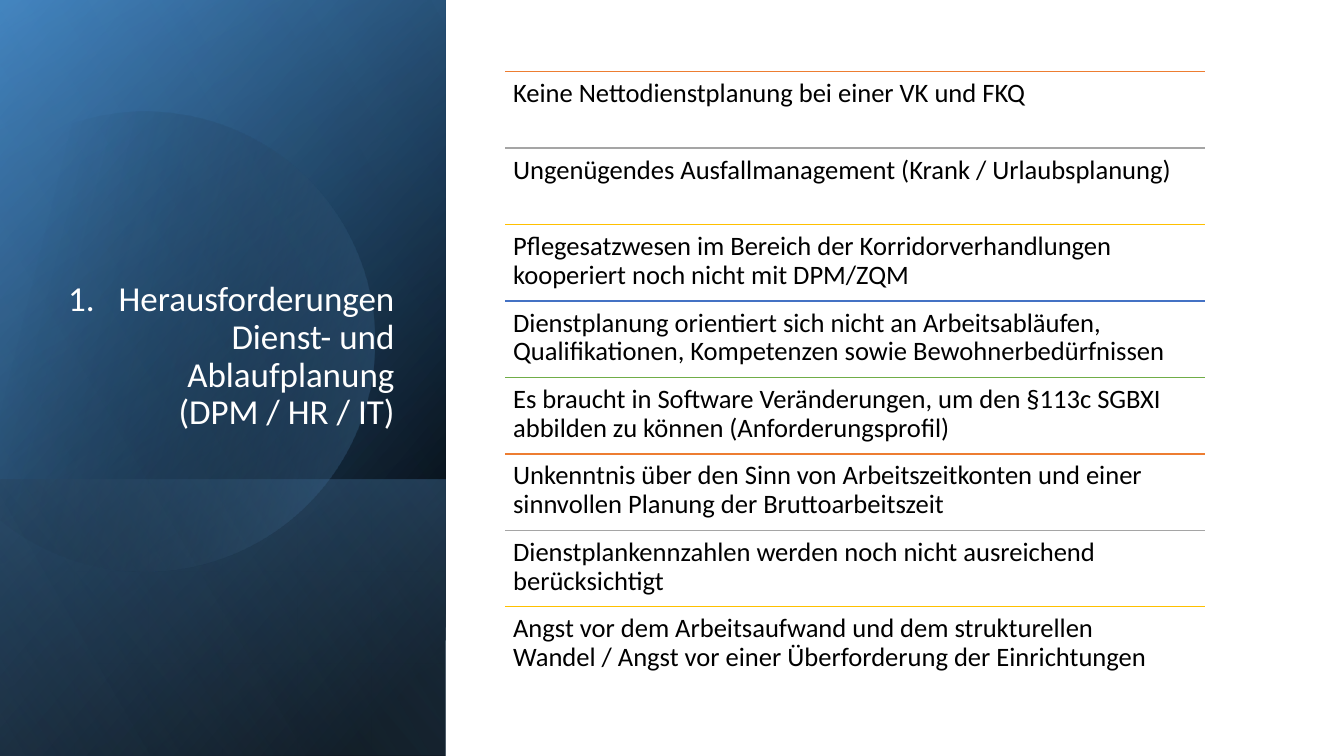
from math import acos, cos, degrees, radians, sin

from lxml.etree import SubElement
from pptx import Presentation
from pptx.dml.color import RGBColor
from pptx.enum.shapes import MSO_CONNECTOR as Connector, MSO_SHAPE as Shape
from pptx.enum.text import MSO_ANCHOR as Anchor, PP_ALIGN as Align
from pptx.oxml.ns import qn
from pptx.util import Inches, Pt


def fill_gradient(shape, stops, angle):
    """Fill with (position %, colour, opacity %) stops, without line or shadow."""
    shape.shadow.inherit = False
    shape.line.fill.background()
    shape.fill.gradient()
    gradient = shape.fill._xPr.find(qn("a:gradFill"))
    for child in list(gradient):
        gradient.remove(child)
    stop_list = SubElement(gradient, qn("a:gsLst"))
    for position, color, opacity in stops:
        stop = SubElement(stop_list, qn("a:gs"), pos=str(position * 1000))
        tone = SubElement(stop, qn("a:srgbClr"), val=color)
        SubElement(tone, qn("a:alpha"), val=str(opacity * 1000))
    SubElement(gradient, qn("a:lin"), ang=str(angle * 60000), scaled="0")


def write_text(box, text, size, color, margins, anchor, align):
    frame = box.text_frame
    side, edge = Inches(margins[0]), Inches(margins[1])
    layout = {"word_wrap": True, "vertical_anchor": anchor,
              "margin_left": side, "margin_right": side,
              "margin_top": edge, "margin_bottom": edge}
    for name, value in layout.items():
        setattr(frame, name, value)
    para = frame.paragraphs[0]
    para.alignment = align
    para.line_spacing = 0.9
    span = para.add_run()
    span.text = text
    span.font.name = "Calibri"
    span.font.size = Pt(size)
    span.font.color.rgb = RGBColor.from_string(color)
    return para


deck = Presentation()
deck.slide_width, deck.slide_height = Inches(13.33), Inches(7.5)
page = deck.slides.add_slide(deck.slide_layouts[6])

# Side panel: layered gradients, each rectangle turned by a quarter
PANEL_WIDTH, PANEL_HEIGHT = 4.42, 7.5
DISC = "disc"
layers = [
    (PANEL_HEIGHT, [(8, "000000", 100), (100, "2E75B6", 100)], 50),
    (PANEL_HEIGHT, [(0, "000000", 0), (99, "5B9BD5", 46)], 30),
    (2.74, [(2, "5B9BD5", 29), (100, "000000", 30)], 130),
    (DISC, [(29, "000000", 0), (100, "5B9BD5", 43)], 30),
    (PANEL_HEIGHT, [(0, "000000", 0), (99, "9DC3E6", 11)], 120),
]
for length, stops, angle in layers:
    if length == DISC:
        # Circle cut off by a chord, tilted so that the chord stands upright
        center_x, center_y, radius, chord, tilt = 1.43, 3.35, 2.28, 1.59, 16.1
        half_arc = degrees(acos(-chord / radius))
        steps = 120
        turns = [radians(tilt - half_arc + 2 * half_arc * step / steps)
                 for step in range(steps + 1)]
        points = [(Inches(center_x + radius * cos(turn)),
                   Inches(center_y + radius * sin(turn))) for turn in turns]
        builder = page.shapes.build_freeform(*points[0])
        builder.add_line_segments(points[1:], close=True)
        layer = builder.convert_to_shape()
        layer.rotation = 360 - tilt
    else:
        layer = page.shapes.add_shape(
            Shape.RECTANGLE,
            Inches((PANEL_WIDTH - length) / 2),
            Inches(PANEL_HEIGHT - (length + PANEL_WIDTH) / 2),
            Inches(length), Inches(PANEL_WIDTH))
        layer.rotation = 90
        layer._element.spPr.find(qn("a:xfrm")).set("flipH", "1")
    fill_gradient(layer, stops, angle)

# Numbered title
title = page.shapes.add_textbox(Inches(0.51), Inches(0.64), Inches(3.5), Inches(3.7))
heading = write_text(title, "Herausforderungen Dienst- und Ablaufplanung (DPM / HR / IT)",
                     25, "FFFFFF", (0.1, 0.05), Anchor.BOTTOM, Align.RIGHT)
numbering = heading._p.get_or_add_pPr()
numbering.set("marL", str(Inches(0.5)))
numbering.set("indent", str(Inches(-0.5)))
SubElement(numbering, qn("a:buFont"), typeface="+mj-lt")
SubElement(numbering, qn("a:buAutoNum"), type="arabicPeriod")

# List of challenges, each below a coloured rule
LEFT, TOP, WIDTH = 5.01, 0.71, 6.94
ROW_HEIGHT = 5.31 / 7
rule_colors = ["ED7D31", "A5A5A5", "FFC000", "4472C4", "70AD47"]
challenges = [
    "Keine Nettodienstplanung bei einer VK und FKQ",
    "Ungenügendes Ausfallmanagement (Krank / Urlaubsplanung)",
    "Pflegesatzwesen im Bereich der Korridorverhandlungen kooperiert noch nicht mit DPM/ZQM",
    "Dienstplanung orientiert sich nicht an Arbeitsabläufen, "
    "Qualifikationen, Kompetenzen sowie Bewohnerbedürfnissen",
    "Es braucht in Software Veränderungen, um den §113c SGBXI "
    "abbilden zu können (Anforderungsprofil)",
    "Unkenntnis über den Sinn von Arbeitszeitkonten und einer "
    "sinnvollen Planung der Bruttoarbeitszeit",
    "Dienstplankennzahlen werden noch nicht ausreichend berücksichtigt",
    "Angst vor dem Arbeitsaufwand und dem strukturellen "
    "Wandel / Angst vor einer Überforderung der Einrichtungen",
]
group = page.shapes.add_group_shape()
for row, challenge in enumerate(challenges):
    top = Inches(TOP + row * ROW_HEIGHT)
    rule = group.shapes.add_connector(
        Connector.STRAIGHT, Inches(LEFT), top, Inches(LEFT + WIDTH), top)
    rule.line.color.rgb = RGBColor.from_string(rule_colors[row % len(rule_colors)])
    rule.line.width = Pt(1)
    SubElement(rule._element.spPr, qn("a:effectLst"))
    box = group.shapes.add_textbox(Inches(LEFT), top, Inches(WIDTH), Inches(ROW_HEIGHT))
    write_text(box, challenge, 19, "000000", (0.08, 0.08), Anchor.TOP, Align.LEFT)

deck.save("out.pptx")
